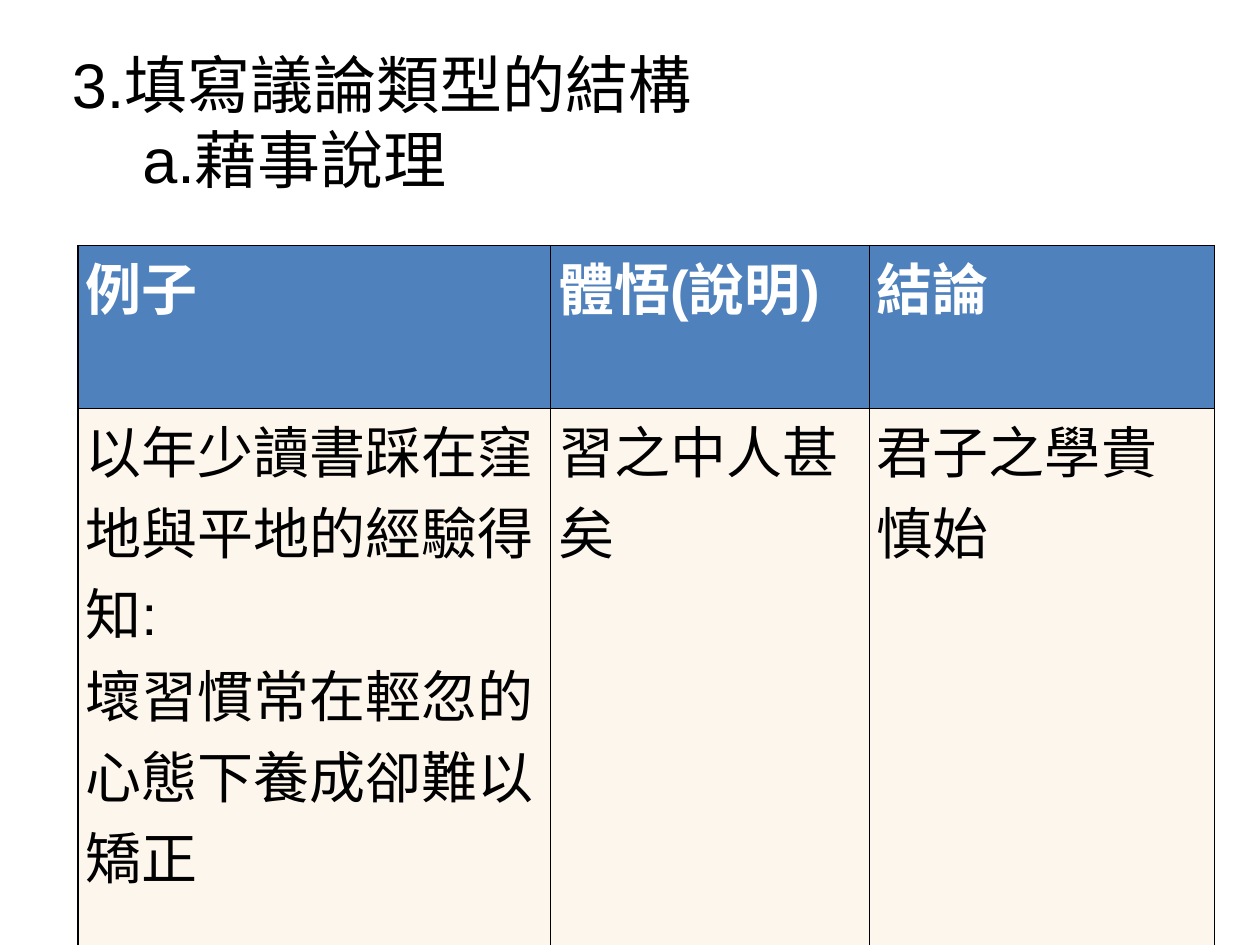
from lxml import etree
from pptx import Presentation
from pptx.dml.color import RGBColor
from pptx.enum.text import MSO_ANCHOR, PP_ALIGN
from pptx.oxml.ns import qn
from pptx.util import Inches, Pt

TOP, LEFT = MSO_ANCHOR.TOP, PP_ALIGN.LEFT
BLACK = RGBColor(0x00, 0x00, 0x00)
WHITE = RGBColor(0xFF, 0xFF, 0xFF)
BLUE = RGBColor(0x4F, 0x81, 0xBD)
CREAM = RGBColor(0xFD, 0xF6, 0xED)
FONT = "Arial"

# Content
TITLE = ["3.填寫議論類型的結構", "a.藉事說理"]
ROWS = [
    ["例子", "體悟(說明)", "結論"],
    ["以年少讀書踩在窪地與平地的經驗得知:\n壞習慣常在輕忽的心態下養成卻難以矯正",
     "習之中人甚矣", "君子之學貴慎始"],
]
COLUMN_WIDTHS = [3.75, 2.53, 2.74]
ROW_HEIGHTS = [0.79, 4.5]


def style_text(frame, size, color, bold=False):
    for para in frame.paragraphs:
        para.alignment = LEFT
        for span in para.runs:
            font = span.font
            font.name, font.size, font.bold = FONT, Pt(size), bold
            font.color.rgb = color


def add_borders(cell):
    """Draw thin black lines round a cell, ahead of its fill."""
    properties = cell._tc.get_or_add_tcPr()
    for index, side in enumerate(("lnL", "lnR", "lnT", "lnB")):
        line = etree.Element(qn("a:" + side), w=str(Pt(1)))
        fill = etree.SubElement(line, qn("a:solidFill"))
        etree.SubElement(fill, qn("a:srgbClr"), val=str(BLACK))
        properties.insert(index, line)


deck = Presentation()
deck.slide_width, deck.slide_height = Inches(10), Inches(7.5)
page = deck.slides.add_slide(deck.slide_layouts[5])

# Title, second line indented
title = page.shapes.title
title.left, title.top = Inches(0.47), Inches(0.31)
title.width, title.height = Inches(7.66), Inches(1.31)
title.text_frame.text = "\n".join(TITLE)
title.text_frame.vertical_anchor = TOP
title.text_frame.word_wrap = True
style_text(title.text_frame, 36, BLACK)
indented = title.text_frame.paragraphs[1]._p.get_or_add_pPr()
indented.set("marL", str(Inches(0.56)))
indented.set("indent", "0")

# Table
table = page.shapes.add_table(
    len(ROWS), len(COLUMN_WIDTHS), Inches(0.62), Inches(1.95),
    Inches(sum(COLUMN_WIDTHS)), Inches(sum(ROW_HEIGHTS))).table
for column, width in zip(table.columns, COLUMN_WIDTHS):
    column.width = Inches(width)
for row, height, texts in zip(table.rows, ROW_HEIGHTS, ROWS):
    row.height = Inches(height)
    header = texts is ROWS[0]
    for cell, text in zip(row.cells, texts):
        cell.text_frame.text = text
        cell.margin_left = cell.margin_right = Inches(0.06)
        cell.margin_top = cell.margin_bottom = 0
        cell.fill.solid()
        cell.fill.fore_color.rgb = BLUE if header else CREAM
        style_text(cell.text_frame, 32, WHITE if header else BLACK, header)
        add_borders(cell)

deck.save("out.pptx")
